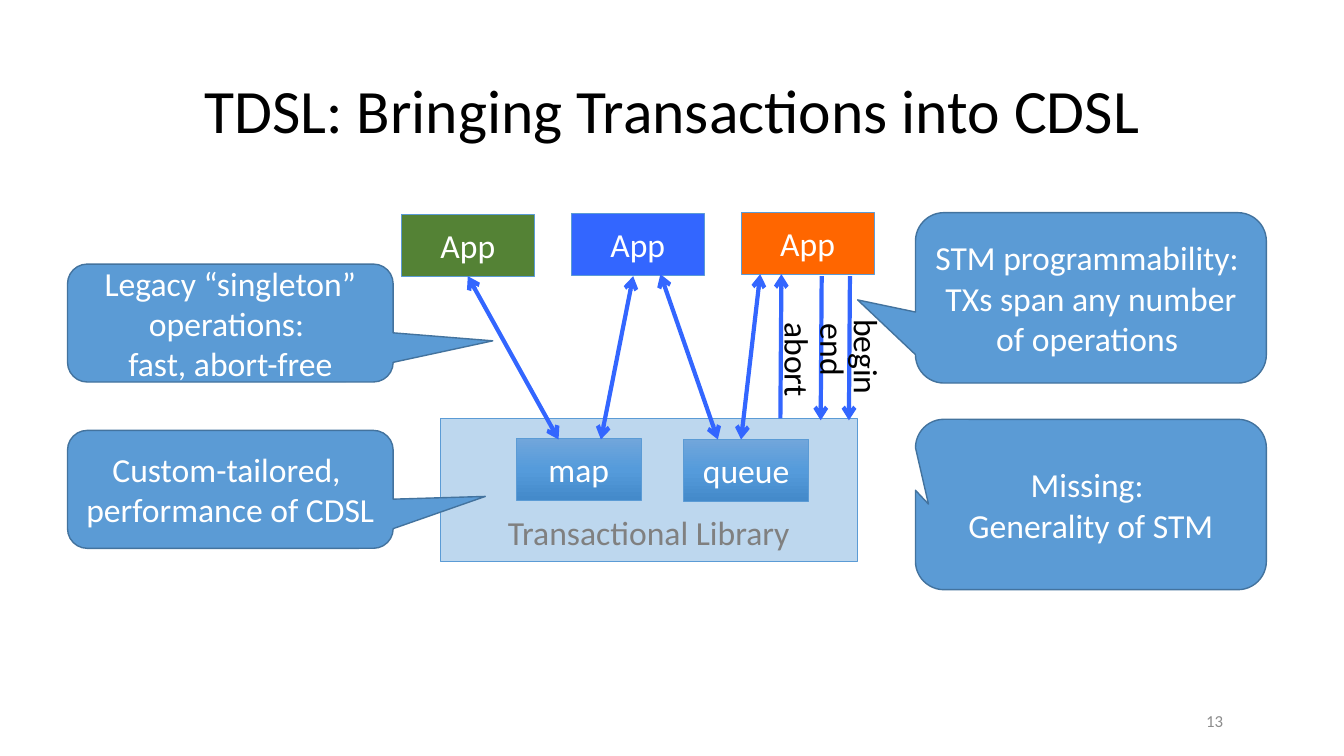
import copy
import pptx
import pptx.util
import pptx.dml.color
import pptx.enum.shapes
import pptx.enum.text
import pptx.oxml
import pptx.oxml.ns

Inches = pptx.util.Inches
Pt = pptx.util.Pt
RGBColor = pptx.dml.color.RGBColor
SHAPE = pptx.enum.shapes.MSO_SHAPE
ALIGN = pptx.enum.text.PP_ALIGN
ANCHOR = pptx.enum.text.MSO_ANCHOR

FONT = "Calibri"
BLACK = RGBColor(0x00, 0x00, 0x00)
WHITE = RGBColor(0xFF, 0xFF, 0xFF)
GRAY = RGBColor(0x80, 0x80, 0x80)
SILVER = RGBColor(0x8C, 0x8C, 0x8C)
GREEN = RGBColor(0x54, 0x82, 0x35)
BLUE = RGBColor(0x33, 0x66, 0xFF)
ORANGE = RGBColor(0xFF, 0x66, 0x00)
SKY = RGBColor(0x5B, 0x9B, 0xD5)
PALE = RGBColor(0xBD, 0xD7, 0xEE)
NAVY = RGBColor(0x43, 0x73, 0x9E)
SHADES = [RGBColor(0x71, 0xA6, 0xDB), RGBColor(0x55, 0x9B, 0xDB),
          RGBColor(0x44, 0x8A, 0xCA)]


def write(shape, lines, color, size=24, align=ALIGN.CENTER, anchor=ANCHOR.MIDDLE):
    frame = shape.text_frame
    frame.word_wrap = True
    frame.vertical_anchor = anchor
    para = frame.paragraphs[0]
    para.alignment = align
    for i, line in enumerate(lines):
        if i:
            para.add_line_break()
        run = para.add_run()
        run.text = line
        run.font.name = FONT
        run.font.size = Pt(size)
        run.font.color.rgb = color
    return para


def add_text(slide, box, text, color, **style):
    shape = slide.shapes.add_textbox(*map(Inches, box))
    return shape, write(shape, [text], color, **style)


def add_box(slide, box, fill, line=SKY, width=0.5, kind=SHAPE.RECTANGLE):
    shape = slide.shapes.add_shape(kind, *map(Inches, box))
    shape.shadow.inherit = False
    shape.fill.solid()
    shape.fill.fore_color.rgb = fill
    shape.line.color.rgb = line
    shape.line.width = Pt(width)
    return shape


def shade(shape):
    fill = shape.fill
    fill.gradient()
    fill.gradient_angle = 270
    stops = shape._element.find(".//" + pptx.oxml.ns.qn("a:gsLst"))
    stops.insert(1, copy.deepcopy(stops[0]))
    for i, stop in enumerate(fill.gradient_stops):
        stop.position = i / 2
        stop.color.rgb = SHADES[i]


def add_arrow(slide, start, end, heads):
    points = map(Inches, (*start, *end))
    line = slide.shapes.add_connector(
        pptx.enum.shapes.MSO_CONNECTOR.STRAIGHT, *points)
    line.line.color.rgb = BLUE
    line.line.width = Pt(3)
    stroke = line.line._get_or_add_ln()
    for head in heads:
        tag = pptx.oxml.ns.qn("a:" + head)
        stroke.append(stroke.makeelement(tag, {"type": "arrow"}))
    props = line._element.spPr
    props.append(props.makeelement(pptx.oxml.ns.qn("a:effectLst"), {}))
    return line


def add_callout(slide, box, tip, lines):
    shape = add_box(slide, box, SKY, NAVY, 1, SHAPE.ROUNDED_RECTANGULAR_CALLOUT)
    for i, value in enumerate((*tip, 0.167)):
        shape.adjustments[i] = value
    write(shape, lines, WHITE)


def add_library(slide, box):
    left, top, width, height = box
    base = add_box(slide, box, PALE)
    write(base, ["Transactional Library"], GRAY, anchor=ANCHOR.BOTTOM)
    base.text_frame.margin_bottom = Inches(0.09)
    for dx, dy, name in ((2.41, 0.21, "queue"), (0.75, 0.2, "map")):
        part = add_box(slide, (left + dx, top + dy, 1.24, 0.61), SKY)
        shade(part)
        write(part, [name], WHITE)


def add_apps(slide, box):
    left, top, width, height = box
    apps = []
    for i, color in enumerate((GREEN, BLUE, ORANGE)):
        app = add_box(slide, (left + 1.685 * i, top - 0.01 * i, width, height), color)
        write(app, ["App"], WHITE)
        apps.append(app)
    return apps


def add_calls(slide, box, apps):
    left, top, width, height = box
    low = top + height
    both = ("headEnd", "tailEnd")
    # Operations: apps to data structures
    for i, (x1, x2) in enumerate(((0, 0.9), (1.64, 1.32), (1.91, 2.48), (2.9, 2.71))):
        high = top if i < 2 else top - 0.02
        line = add_arrow(slide, (left + x1, high), (left + x2, low), both)
        if i == 0:
            line.begin_connect(apps[0], 2)
    # Transaction control: app to library
    for x, dy, head in ((3.79, 0, "tailEnd"), (3.51, 0, "tailEnd"),
                        (3.11, -0.02, "headEnd")):
        add_arrow(slide, (left + x, top + dy),
                  (left + x - 0.01, top + dy + 1.43), [head])
    # Vertical labels
    for x, dy, wide, name, align in (
            (3.46, 0.55, 1, "begin", ALIGN.CENTER),
            (3.23, 0.48, 0.8, "end", ALIGN.CENTER),
            (2.77, 0.54, 1.01, "abort", ALIGN.RIGHT)):
        label, para = add_text(slide, (left + x, top + dy, wide, 0.5), name,
                               BLACK, align=align, anchor=ANCHOR.TOP)
        label.rotation = 90


def add_notes(slide, box):
    left, top, width, height = box
    right, wide, tall = left + 8.41, 3.48, 1.69
    for spot, tip, lines in (
            ((right, top - 0.51, wide, tall), (-0.665, 0.012),
             ["STM programmability: ", "TXs span any number of operations "]),
            ((left, top + 1.65, width, height), (0.783, 0.06),
             ["Custom-tailored,  performance of CDSL"]),
            ((left, top, width, height), (0.806, 0.151),
             ["Legacy “singleton” operations: ", "fast, abort-free"]),
            ((right, top + 1.54, wide, tall), (-0.463, -0.002),
             ["Missing: ", "Generality of STM"])):
        add_callout(slide, spot, tip, lines)


def main():
    deck = pptx.Presentation()
    deck.slide_width, deck.slide_height = Inches(13.33), Inches(7.5)
    slide = deck.slides.add_slide(deck.slide_layouts[6])
    # Title and page number
    shape, para = add_text(slide, (0.92, 0.4, 11.5, 1.45),
                           "TDSL: Bringing Transactions into CDSL", BLACK, size=44)
    para.line_spacing = 0.9
    add_text(slide, (9.23, 6.95, 3, 0.4), "13", SILVER, size=12, align=ALIGN.RIGHT)
    # Diagram
    add_library(slide, (4.37, 4.15, 4.13, 1.42))
    apps = add_apps(slide, (3.98, 2.13, 1.32, 0.61))
    add_calls(slide, (4.64, 2.74, 3.8, 1.62), apps)
    # Callouts
    add_notes(slide, (0.67, 2.62, 3.23, 1.17))
    deck.save("out.pptx")


if __name__ == "__main__":
    main()
